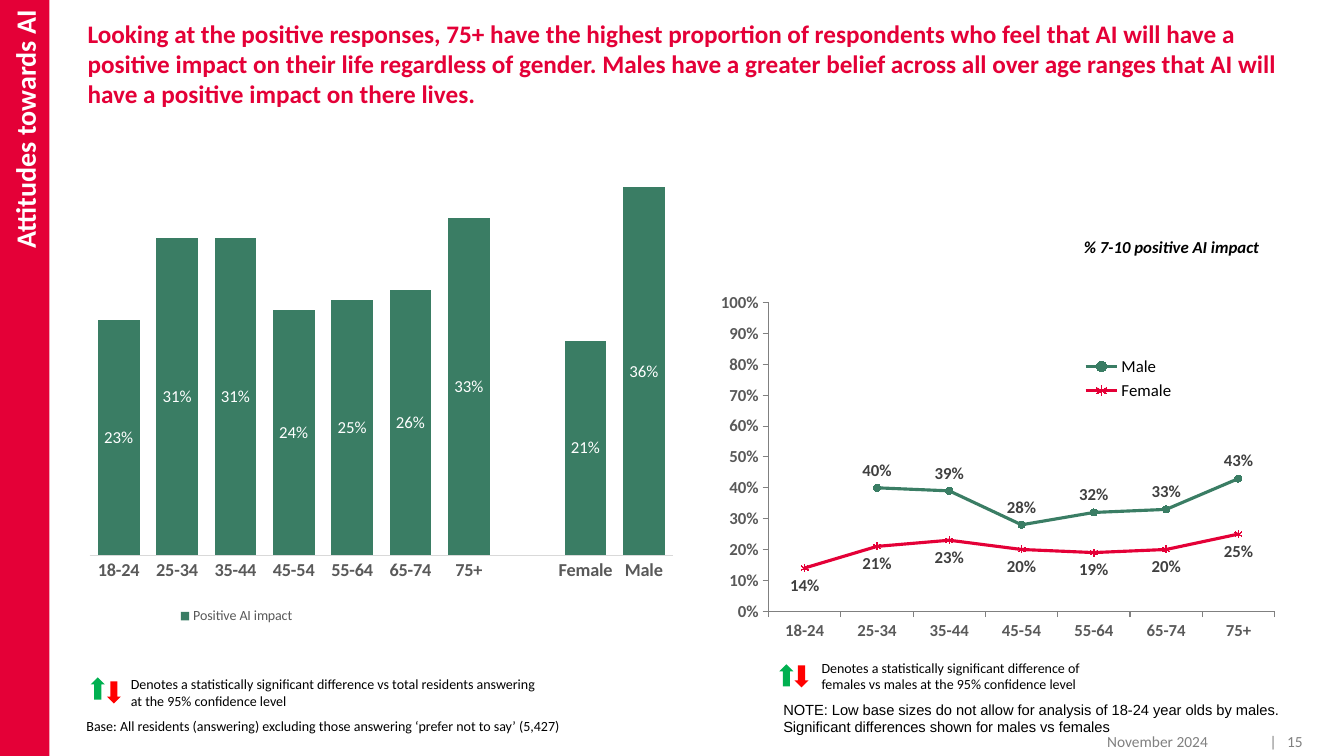
from lxml import etree
from pptx import Presentation
from pptx.chart.data import CategoryChartData
from pptx.dml.color import RGBColor
from pptx.enum.chart import (XL_CHART_TYPE, XL_LABEL_POSITION, XL_LEGEND_POSITION,
                             XL_MARKER_STYLE, XL_TICK_MARK)
from pptx.enum.shapes import MSO_SHAPE
from pptx.enum.text import MSO_ANCHOR, PP_ALIGN
from pptx.oxml.ns import qn
from pptx.util import Inches, Pt

STACKED, LINES = XL_CHART_TYPE.COLUMN_STACKED, XL_CHART_TYPE.LINE_MARKERS
ABOVE, BELOW, CENTRE = XL_LABEL_POSITION.ABOVE, XL_LABEL_POSITION.BELOW, XL_LABEL_POSITION.CENTER
TOP, RIGHT = XL_LEGEND_POSITION.TOP, XL_LEGEND_POSITION.RIGHT
CIRCLE, STAR = XL_MARKER_STYLE.CIRCLE, XL_MARKER_STYLE.STAR
NO_TICK, TICK_OUT = XL_TICK_MARK.NONE, XL_TICK_MARK.OUTSIDE
RECTANGLE, UP, DOWN = MSO_SHAPE.RECTANGLE, MSO_SHAPE.UP_ARROW, MSO_SHAPE.DOWN_ARROW
MIDDLE, ALIGN_RIGHT, ALIGN_CENTRE = MSO_ANCHOR.MIDDLE, PP_ALIGN.RIGHT, PP_ALIGN.CENTER

COLOURS = {name: RGBColor.from_string(value) for name, value in {
    "red": "E40037", "green": "3A7D64", "white": "FFFFFF", "black": "000000",
    "grey": "808080", "axis": "595959", "label": "404040", "rule": "D9D9D9",
    "up": "00B050", "down": "FF0000"}.items()}

deck = Presentation()
deck.slide_width, deck.slide_height = Inches(13.33), Inches(7.5)
page = deck.slides.add_slide(deck.slide_layouts[6])


def write_text(text, at=None, shape=None, size=10, colour="black", font="Calibri",
               bold=False, italic=False, align=None, before=0):
    box = shape or page.shapes.add_textbox(*map(Inches, at))
    box.text_frame.word_wrap = True
    para = box.text_frame.paragraphs[0]
    para.alignment = align
    para.space_before = Pt(before)
    span = para.add_run()
    span.text = text
    span.font.name, span.font.size = font, Pt(size)
    span.font.bold, span.font.italic = bold, italic
    span.font.color.rgb = COLOURS[colour]
    return box


def place_layout(parent, index, target, bounds):
    layout = parent.find(qn("c:layout"))
    if layout is None:
        layout = etree.Element(qn("c:layout"))
        parent.insert(index, layout)
    manual = etree.SubElement(layout, qn("c:manualLayout"))
    settings = [("layoutTarget", target)] if target else []
    settings += [("xMode", "edge"), ("yMode", "edge"), *zip("xywh", bounds)]
    for tag, value in settings:
        etree.SubElement(manual, qn("c:" + tag)).set("val", str(value))


banner = page.shapes.add_shape(RECTANGLE, 0, 0, Inches(0.49), deck.slide_height)
banner.shadow.inherit = False
banner.fill.solid()
banner.fill.fore_color.rgb = COLOURS["red"]
banner.line.fill.background()
write_text("Attitudes towards AI", shape=banner, size=20, colour="white", bold=True,
           align=ALIGN_RIGHT)
frame = banner.text_frame
frame.vertical_anchor = MIDDLE
frame.margin_left = frame.margin_right = frame.margin_top = Inches(0.1)
frame.margin_bottom = Inches(0.05)
frame._txBody.bodyPr.set("vert", "vert270")

title = write_text(
    "Looking at the positive responses, 75+ have the highest proportion of respondents who "
    "feel that AI will have a positive impact on their life regardless of gender. Males have "
    "a greater belief across all over age ranges that AI will have a positive impact on there "
    "lives.", (0.77, 0.13, 12.25, 1.41), size=18, colour="red", bold=True)
title.text_frame.margin_bottom = 0

ages = ["18-24", "25-34", "35-44", "45-54", "55-64", "65-74", "75+"]
charts = [
    dict(kind=STACKED, at=(0.87, 1.09, 5.9, 5.43), categories=ages + ["", "Female", "Male"],
         series=[("Positive AI impact",
                  [0.23, 0.31, 0.31, 0.24, 0.25, 0.26, 0.33, None, 0.21, 0.36],
                  "green", None, CENTRE)],
         plot=(0.003, 0.067, 0.981, 0.747), legend=(0.14, 0.9, 0.22, 0.05),
         legend_side=TOP, legend_size=10, legend_colour="axis", label_colour="white",
         axis_size=13, axis_line="rule", tick=NO_TICK, top=0.4),
    dict(kind=LINES, at=(7.06, 2.03, 5.99, 4.73), categories=ages,
         series=[("Male", [None, 0.4, 0.39, 0.28, 0.32, 0.33, 0.43], "green", CIRCLE, ABOVE),
                 ("Female", [0.14, 0.21, 0.23, 0.2, 0.19, 0.2, 0.25], "red", STAR, BELOW)],
         plot=(0.094, 0.206, 0.838, 0.647), legend=(0.6, 0.31, 0.18, 0.11),
         legend_side=RIGHT, legend_size=12, legend_colour="black", label_colour="label",
         axis_size=12, axis_line="grey", tick=TICK_OUT, top=1),
]
for info in charts:
    data = CategoryChartData(number_format="0%")
    data.categories = info["categories"]
    for name, values, *style in info["series"]:
        data.add_series(name, values)
    chart = page.shapes.add_chart(info["kind"], *map(Inches, info["at"]), data).chart
    chart.has_title = False
    chart.font.name, chart.font.size = "Calibri", Pt(10)
    chart.font.color.rgb = COLOURS["black"]
    stacked = info["kind"] == STACKED

    for axis in (chart.category_axis, chart.value_axis):
        axis.has_major_gridlines = False
        axis.major_tick_mark, axis.minor_tick_mark = info["tick"], NO_TICK
        axis.format.line.color.rgb = COLOURS[info["axis_line"]]
        axis.format.line.width = Pt(0.75)
        font = axis.tick_labels.font
        font.name, font.size, font.bold = "Calibri", Pt(info["axis_size"]), True
        font.color.rgb = COLOURS["axis"]
    scale = chart.value_axis
    scale.minimum_scale, scale.maximum_scale, scale.major_unit = 0, info["top"], 0.1
    scale.tick_labels.number_format = "0%"
    scale.tick_labels.number_format_is_linked = False
    scale.visible = not stacked

    plot = chart.plots[0]
    plot.vary_by_categories = False
    if stacked:
        plot.gap_width, plot.overlap = 40, 100
    for series, (name, values, colour, marker, position) in zip(plot.series, info["series"]):
        fills = [series.format.fill]
        if marker is not None:
            series.smooth = False
            series.format.line.color.rgb = COLOURS[colour]
            series.format.line.width = Pt(2.25)
            series.marker.style, series.marker.size = marker, 5
            series.marker.format.line.color.rgb = COLOURS[colour]
            fills = [series.marker.format.fill]
        for fill in fills:
            fill.solid()
            fill.fore_color.rgb = COLOURS[colour]
        labels = series.data_labels
        labels.show_value, labels.position = True, position
        labels.number_format, labels.number_format_is_linked = "0%", False
        labels.font.name, labels.font.size = "Calibri", Pt(12)
        labels.font.bold = not stacked
        labels.font.color.rgb = COLOURS[info["label_colour"]]

    chart.has_legend = True
    legend = chart.legend
    legend.position, legend.include_in_layout = info["legend_side"], False
    legend.font.name, legend.font.size = "Calibri", Pt(info["legend_size"])
    legend.font.color.rgb = COLOURS[info["legend_colour"]]
    place_layout(chart._chartSpace.chart.plotArea, 0, "inner", info["plot"])
    place_layout(legend._element, 1, None, info["legend"])

for left, top, kind, colour in [(0.9, 6.72, UP, "up"), (1.06, 6.76, DOWN, "down"),
                                (7.73, 6.59, UP, "up"), (7.88, 6.6, DOWN, "down")]:
    arrow = page.shapes.add_shape(kind, Inches(left), Inches(top), Inches(0.14), Inches(0.22))
    arrow.shadow.inherit = False
    arrow.fill.solid()
    arrow.fill.fore_color.rgb = COLOURS[colour]
    arrow.line.fill.background()

write_text("Denotes a statistically significant difference vs total residents answering "
           "at the 95% confidence level", (1.2, 6.65, 4.33, 0.44))
write_text("Denotes a statistically significant difference of females vs males at the 95% "
           "confidence level", (8.05, 6.49, 2.96, 0.44))
write_text("% 7-10 positive AI impact", (9.91, 2.3, 3.42, 0.3), size=12, bold=True,
           italic=True, align=ALIGN_CENTRE, before=6)
write_text("NOTE: Low base sizes do not allow for analysis of 18-24 year olds by males. "
           "Significant differences shown for males vs females", (7.67, 6.9, 5.35, 0.45),
           size=10.5, font="Arial")
write_text("Base: All residents (answering) excluding those answering ‘prefer not to say’ "
           "(5,427)", (0.76, 7.07, 6.13, 0.27))
write_text("November 2024", (9.68, 7.21, 2.4, 0.15), size=11, colour="grey", align=ALIGN_RIGHT)
number = write_text("|", (12.17, 7.21, 0.85, 0.15), size=11, colour="grey", align=ALIGN_RIGHT)
number.text_frame.paragraphs[0].runs[0].text = "|   15"

deck.save("out.pptx")
